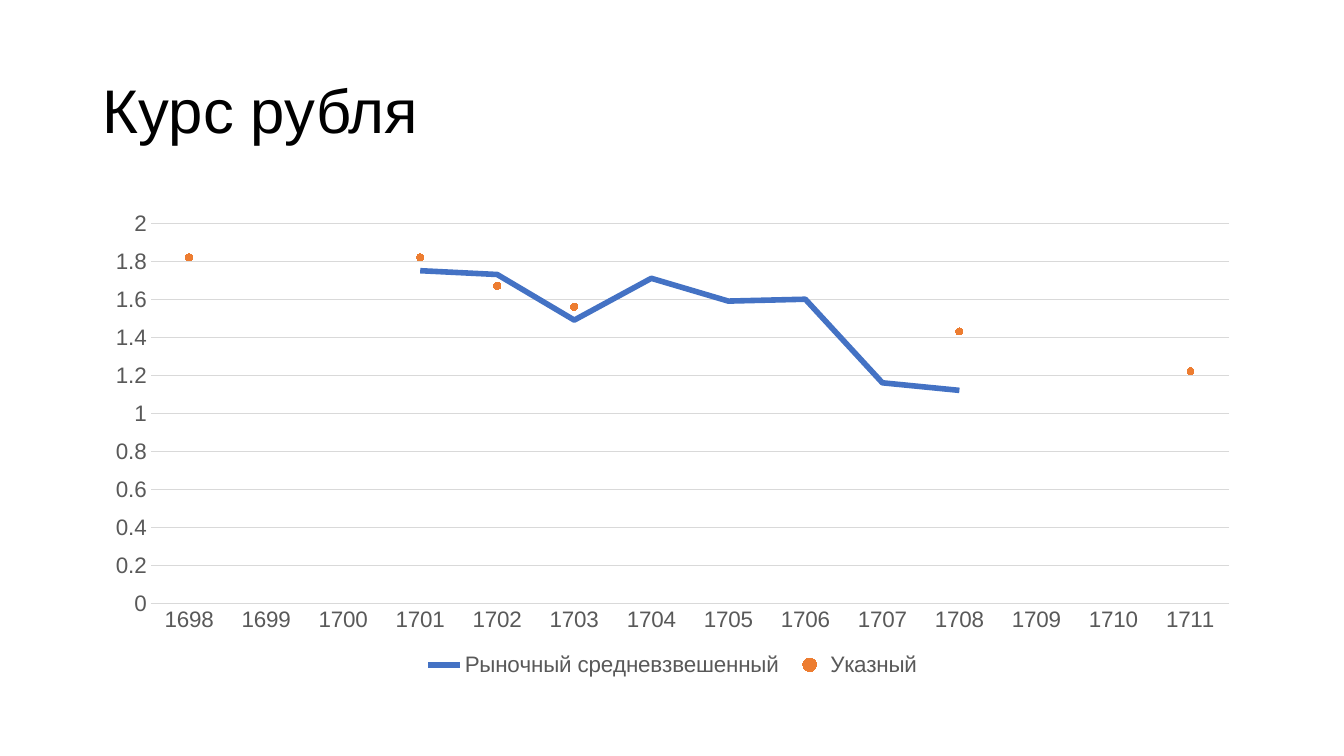
from dataclasses import dataclass
from typing import Any, Optional

from pptx import Presentation
from pptx.chart.data import CategoryChartData
from pptx.dml.color import RGBColor
from pptx.enum.chart import XL_CHART_TYPE, XL_LEGEND_POSITION, XL_MARKER_STYLE, XL_TICK_MARK
from pptx.enum.text import MSO_ANCHOR, MSO_AUTO_SIZE, PP_ALIGN
from pptx.util import Inches, Pt

LINE = XL_CHART_TYPE.LINE_MARKERS
BOTTOM = XL_LEGEND_POSITION.BOTTOM
DOT = XL_MARKER_STYLE.CIRCLE
BARE = XL_MARKER_STYLE.NONE
NO_TICK = XL_TICK_MARK.NONE
MIDDLE = MSO_ANCHOR.MIDDLE
NO_FIT = MSO_AUTO_SIZE.NONE
LEFT = PP_ALIGN.LEFT


@dataclass(frozen=True)
class Theme:
    face: str = "Arial"
    ink: str = "000000"
    label: str = "595959"
    grid: str = "D9D9D9"
    market: str = "4472C4"
    decree: str = "ED7D31"
    head: int = 44
    small: int = 16


@dataclass(frozen=True)
class Rate:
    name: str
    color: str
    points: dict[int, float]
    width: Optional[float] = None
    dot: Optional[int] = None


THEME = Theme()
YEARS = range(1698, 1712)
RATES = (
    Rate("Рыночный средневзвешенный", THEME.market,
         {1701: 1.75, 1702: 1.73, 1703: 1.49, 1704: 1.71,
          1705: 1.59, 1706: 1.6, 1707: 1.16, 1708: 1.12}, width=4),
    Rate("Указный", THEME.decree,
         {1698: 1.82, 1701: 1.82, 1702: 1.67, 1703: 1.56,
          1708: 1.43, 1711: 1.22}, dot=5),
)


def apply(item: Any, values: dict[str, Any]) -> None:
    for key, value in values.items():
        setattr(item, key, value)


def paint(fill: Any, color: str) -> None:
    fill.solid()
    fill.fore_color.rgb = RGBColor.from_string(color)


def write(font: Any, size: int, color: str) -> None:
    apply(font, {"name": THEME.face, "size": Pt(size), "bold": False})
    font.color.rgb = RGBColor.from_string(color)


def stroke(line: Any, color: str, width: float) -> None:
    paint(line.fill, color)
    line.width = Pt(width)


def add_title(slide: Any, text: str) -> None:
    title = slide.shapes.title
    apply(title, {"left": Inches(0.92), "top": Inches(0.4),
                  "width": Inches(11.5), "height": Inches(1.45)})
    frame = title.text_frame
    apply(frame, {"text": text, "word_wrap": True,
                  "auto_size": NO_FIT, "vertical_anchor": MIDDLE})
    para = frame.paragraphs[0]
    apply(para, {"alignment": LEFT, "line_spacing": 0.9})
    write(para.runs[0].font, THEME.head, THEME.ink)


def style_rate(series: Any, rate: Rate) -> None:
    series.smooth = False
    mark = series.marker
    if rate.width:
        stroke(series.format.line, rate.color, rate.width)
        mark.style = BARE
    else:
        series.format.line.fill.background()
        apply(mark, {"style": DOT, "size": rate.dot})
        paint(mark.format.fill, rate.color)
        stroke(mark.format.line, rate.color, 0.75)


def style_axes(chart: Any) -> None:
    years, values = chart.category_axis, chart.value_axis
    for axis in (years, values):
        apply(axis, {"major_tick_mark": NO_TICK, "minor_tick_mark": NO_TICK})
        write(axis.tick_labels.font, THEME.small, THEME.label)
    stroke(years.format.line, THEME.grid, 0.75)
    apply(values, {"minimum_scale": 0, "maximum_scale": 2, "major_unit": 0.2,
                   "has_major_gridlines": True})
    values.format.line.fill.background()
    stroke(values.major_gridlines.format.line, THEME.grid, 0.75)


def add_rates(slide: Any, rates: tuple[Rate, ...]) -> None:
    data = CategoryChartData()
    data.categories = [str(year) for year in YEARS]
    for rate in rates:
        data.add_series(rate.name, [rate.points.get(year) for year in YEARS])
    chart = slide.shapes.add_chart(
        LINE, Inches(0.92), Inches(2), Inches(11.5), Inches(4.76), data).chart
    apply(chart, {"has_title": False, "has_legend": True})
    write(chart.font, THEME.small, THEME.ink)
    chart.plots[0].vary_by_categories = False
    apply(chart.legend, {"position": BOTTOM, "include_in_layout": False})
    write(chart.legend.font, THEME.small, THEME.label)
    style_axes(chart)
    for series, rate in zip(chart.plots[0].series, rates):
        style_rate(series, rate)


def main() -> None:
    deck = Presentation()
    apply(deck, {"slide_width": Inches(13.33), "slide_height": Inches(7.5)})
    slide = deck.slides.add_slide(deck.slide_layouts.get_by_name("Title Only"))
    add_title(slide, "Курс рубля")
    add_rates(slide, RATES)
    deck.save("out.pptx")


if __name__ == "__main__":
    main()
